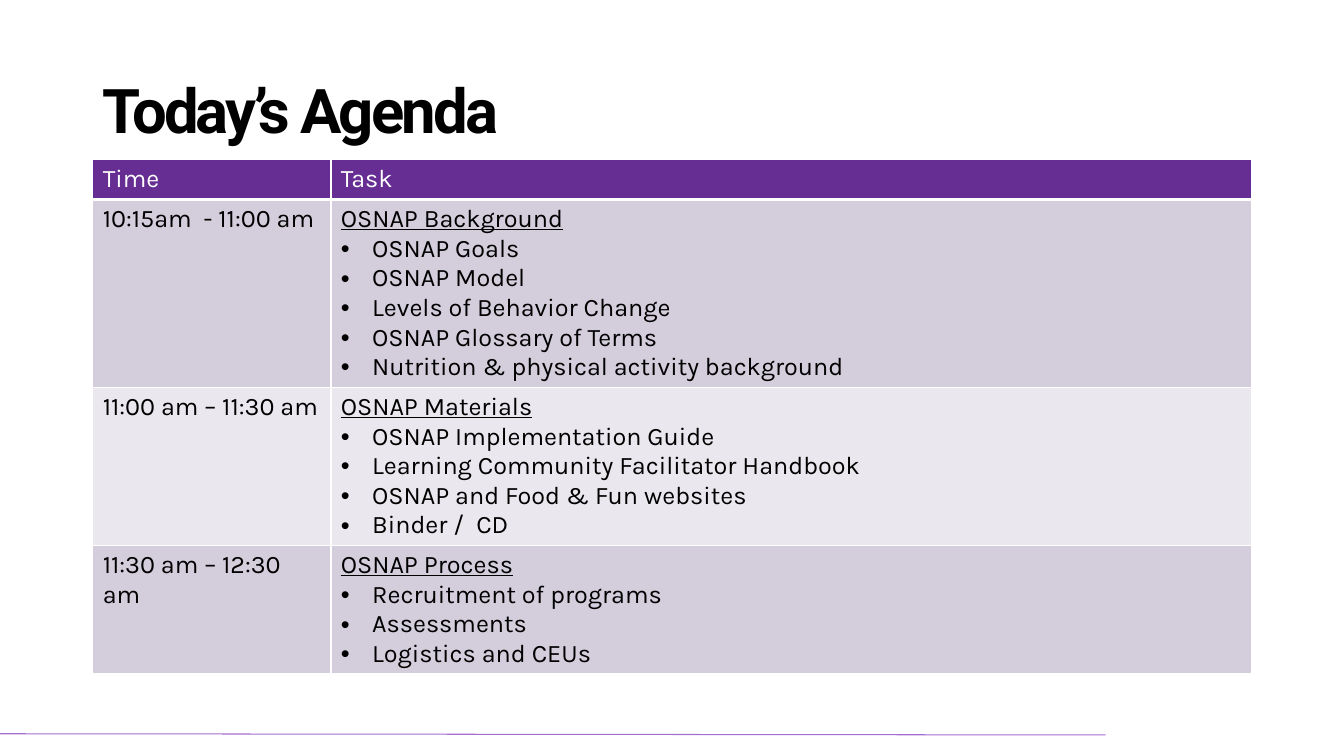
from dataclasses import dataclass

from lxml.etree import SubElement
from pptx import Presentation
from pptx.dml.color import RGBColor
from pptx.enum.shapes import MSO_CONNECTOR
from pptx.enum.text import MSO_ANCHOR, PP_ALIGN
from pptx.oxml.ns import qn
from pptx.util import Cm, Pt


@dataclass(frozen=True)
class Theme:
    title_font: str = "Roboto"
    body_font: str = "Karla"
    title_size: int = 44
    body_size: int = 18
    text: str = "000000"
    white: str = "FFFFFF"
    header: str = "662E93"
    bands: tuple = ("D3CDDC", "EAE8EE")
    rule: str = "A56ED2"


HEADINGS = ("Time", "Task")
AGENDA = [
    ("10:15am  - 11:00 am", "OSNAP Background", [
        "OSNAP Goals",
        "OSNAP Model",
        "Levels of Behavior Change",
        "OSNAP Glossary of Terms",
        "Nutrition & physical activity background",
    ]),
    ("11:00 am – 11:30 am", "OSNAP Materials", [
        "OSNAP Implementation Guide",
        "Learning Community Facilitator Handbook",
        "OSNAP and Food & Fun websites",
        "Binder /  CD",
    ]),
    ("11:30 am – 12:30 am", "OSNAP Process", [
        "Recruitment of programs",
        "Assessments",
        "Logistics and CEUs",
    ]),
]


class AgendaSlide:
    def __init__(self, presentation, theme):
        self.theme = theme
        self.slide = presentation.slides.add_slide(presentation.slide_layouts[5])

    def style_run(self, run, font, size, color, bold=False):
        run.font.name = font
        run.font.size = Pt(size)
        run.font.color.rgb = RGBColor.from_string(color)
        run.font.bold = bold

    def add_title(self, text, left, top, width, height):
        title = self.slide.shapes.title
        title.left, title.top = Cm(left), Cm(top)
        title.width, title.height = Cm(width), Cm(height)
        frame = title.text_frame
        frame.text = text
        frame.word_wrap = True
        frame.vertical_anchor = MSO_ANCHOR.MIDDLE
        paragraph = frame.paragraphs[0]
        paragraph.alignment = PP_ALIGN.LEFT
        paragraph.line_spacing = 0.9
        run = paragraph.runs[0]
        self.style_run(run, self.theme.title_font, self.theme.title_size,
                       self.theme.text, bold=True)
        run.font._element.set("spc", "-200")

    def add_rule(self, start_x, start_y, end_x, end_y):
        line = self.slide.shapes.add_connector(
            MSO_CONNECTOR.STRAIGHT, Cm(start_x), Cm(start_y), Cm(end_x), Cm(end_y))
        line.line.color.rgb = RGBColor.from_string(self.theme.rule)
        line.line.width = Pt(0.75)
        SubElement(line._element.spPr, qn("a:effectLst"))

    def add_borders(self, cell, bottom):
        properties = cell._tc.get_or_add_tcPr()
        for side, width in (("L", 1), ("R", 1), ("T", 1), ("B", bottom)):
            border = SubElement(properties, qn(f"a:ln{side}"), w=str(Pt(width)))
            fill = SubElement(border, qn("a:solidFill"))
            SubElement(fill, qn("a:srgbClr"), val=self.theme.white)

    def add_bullet(self, paragraph):
        properties = paragraph._p.get_or_add_pPr()
        indent = Cm(0.79)
        properties.set("marL", str(indent))
        properties.set("indent", str(-indent))
        SubElement(properties, qn("a:buFont"), typeface="Arial")
        SubElement(properties, qn("a:buChar"), char="•")

    def fill_cell(self, cell, lines, fill, color, bottom=1):
        """Write the first line plain and the others as bullets below it, underlined as a heading."""
        self.add_borders(cell, bottom)
        cell.fill.solid()
        cell.fill.fore_color.rgb = RGBColor.from_string(fill)
        cell.margin_left = cell.margin_right = Cm(0.25)
        cell.margin_top = cell.margin_bottom = Cm(0.13)
        cell.text_frame.text = "\n".join(lines)
        for index, paragraph in enumerate(cell.text_frame.paragraphs):
            if index:
                self.add_bullet(paragraph)
            run = paragraph.runs[0]
            self.style_run(run, self.theme.body_font, self.theme.body_size, color)
            run.font.underline = index == 0 and len(lines) > 1

    def add_agenda(self, left, top, column_widths, row_heights):
        table = self.slide.shapes.add_table(
            len(row_heights), len(column_widths), Cm(left), Cm(top),
            Cm(sum(column_widths)), Cm(sum(row_heights))).table
        for column, width in zip(table.columns, column_widths):
            column.width = Cm(width)
        for row, height in zip(table.rows, row_heights):
            row.height = Cm(height)
        theme = self.theme
        for column, heading in enumerate(HEADINGS):
            self.fill_cell(table.cell(0, column), [heading], theme.header, theme.white, bottom=3)
        for row, (time, topic, tasks) in enumerate(AGENDA, start=1):
            band = theme.bands[(row - 1) % len(theme.bands)]
            self.fill_cell(table.cell(row, 0), [time], band, theme.text)
            self.fill_cell(table.cell(row, 1), [topic, *tasks], band, theme.text)


def main():
    presentation = Presentation()
    presentation.slide_width = Cm(33.87)
    presentation.slide_height = Cm(19.05)
    agenda = AgendaSlide(presentation, Theme())
    agenda.add_rule(27.86, 18.52, 0, 18.49)
    agenda.add_agenda(2.34, 4.02, (6, 23.21), (0.97, 4.73, 3.98, 3.23))
    agenda.add_title("Today’s Agenda", 2.34, 1.02, 29.21, 3.68)
    presentation.save("out.pptx")


if __name__ == "__main__":
    main()
